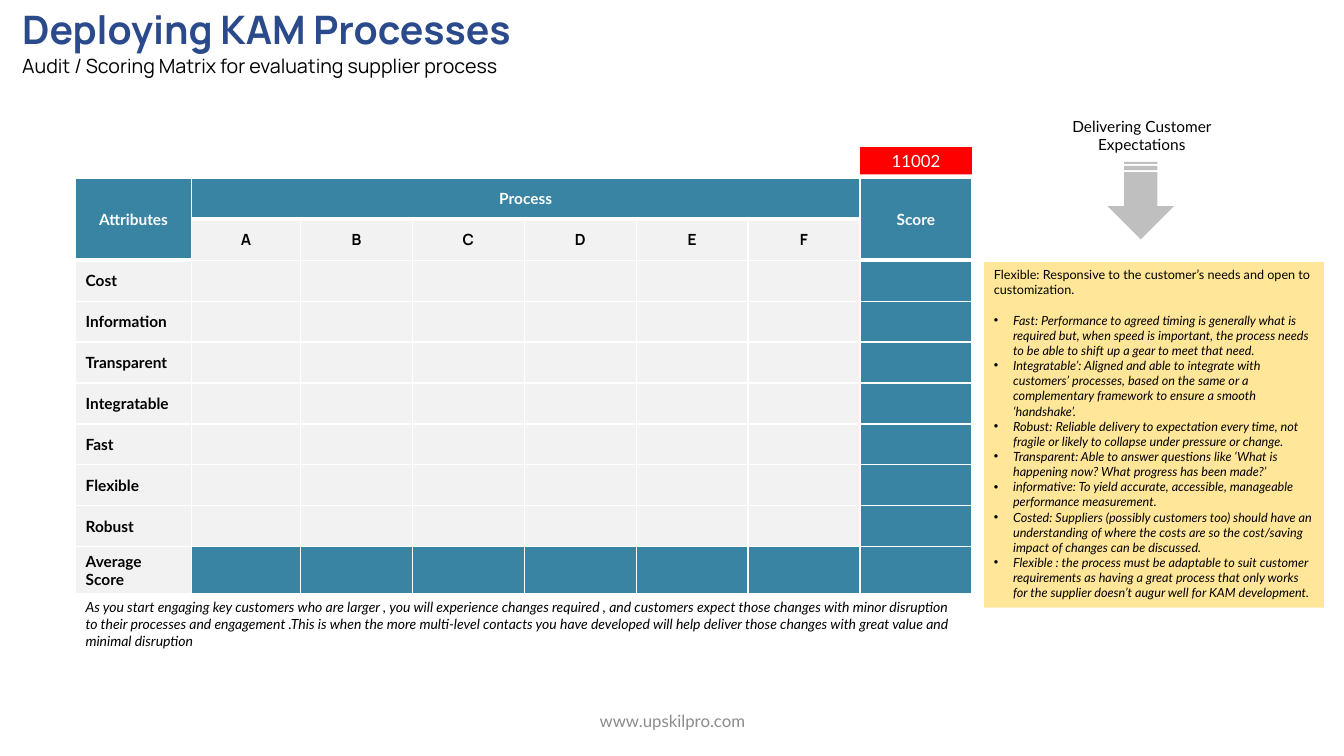
"""Build the KAM process audit and scoring matrix slide."""
from dataclasses import dataclass

from lxml import etree
from pptx import Presentation
from pptx.dml.color import RGBColor
from pptx.enum.shapes import MSO_SHAPE
from pptx.enum.text import MSO_ANCHOR, MSO_AUTO_SIZE, PP_ALIGN
from pptx.oxml.ns import qn
from pptx.util import Inches, Pt

LEFT, CENTER = PP_ALIGN.LEFT, PP_ALIGN.CENTER
TOP, MIDDLE = MSO_ANCHOR.TOP, MSO_ANCHOR.MIDDLE
RECTANGLE, ARROW = MSO_SHAPE.RECTANGLE, MSO_SHAPE.STRIPED_RIGHT_ARROW
NO_AUTOFIT = MSO_AUTO_SIZE.NONE

NAVY = RGBColor(0x2A, 0x4A, 0x8B)
TEAL = RGBColor(0x39, 0x84, 0xA3)
PALE = RGBColor(0xF2, 0xF2, 0xF2)
YELLOW = RGBColor(0xFF, 0xE6, 0x99)
SILVER = RGBColor(0xBF, 0xBF, 0xBF)
GREY = RGBColor(0x8C, 0x8C, 0x8C)
RED = RGBColor(0xFF, 0x00, 0x00)
BLACK = RGBColor(0x00, 0x00, 0x00)
WHITE = RGBColor(0xFF, 0xFF, 0xFF)


@dataclass(frozen=True)
class Style:
    size: float
    color: RGBColor = BLACK
    font: str = "Lato"
    bold: bool = False
    italic: bool = False


@dataclass(frozen=True)
class Box:
    left: float
    top: float
    width: float
    height: float

    def lengths(self):
        return [Inches(value) for value in (self.left, self.top, self.width, self.height)]


@dataclass(frozen=True)
class Label:
    text: str
    box: Box
    style: Style
    align: PP_ALIGN = CENTER
    anchor: MSO_ANCHOR = TOP


TABLE_BOX = Box(0.75, 1.77, 8.89, 4.06)
COLUMN_WIDTHS = [1.15, 1.08] + [1.11] * 6
PROCESSES = "ABCDEF"
ATTRIBUTES = ["Cost", "Information", "Transparent", "Integratable", "Fast",
              "Flexible", "Robust", "Average Score"]
HEADER_ROWS = 2
ROW_COUNT = HEADER_ROWS + len(ATTRIBUTES)
LAST_ROW, LAST_COLUMN = ROW_COUNT - 1, len(COLUMN_WIDTHS) - 1

HEADER = Style(11, WHITE, bold=True)
PROCESS = Style(11, font="Manrope", bold=True)
ATTRIBUTE = Style(11, bold=True)
NOTE = Style(9)
NOTE_ITEM = Style(9, italic=True)

EXPECTATION_INTRO = "Flexible: Responsive to the customer’s needs and open to customization."
EXPECTATIONS = [
    "Fast: Performance to agreed timing is generally what is required but, when speed is "
    "important, the process needs to be able to shift up a gear to meet that need.",
    "Integratable’: Aligned and able to integrate with customers’ processes, based on the same "
    "or a complementary framework to ensure a smooth ‘handshake’.",
    "Robust: Reliable delivery to expectation every time, not fragile or likely to collapse "
    "under pressure or change.",
    "Transparent: Able to answer questions like ‘What is happening now? What progress has been "
    "made?’",
    "informative: To yield accurate, accessible, manageable performance measurement.",
    "Costed: Suppliers (possibly customers too) should have an understanding of where the costs "
    "are so the cost/saving impact of changes can be discussed.",
    "Flexible : the process must be adaptable to suit customer requirements as having a great "
    "process that only works for the supplier doesn’t augur well for KAM development.",
]
LABELS = [
    Label("Delivering Customer Expectations", Box(10.27, 1.11, 2.11, 0.84), Style(11)),
    Label("www.upskilpro.com", Box(4.42, 6.95, 4.5, 0.4), Style(12, GREY), anchor=MIDDLE),
    Label("As you start engaging key customers who are larger , you will experience changes "
          "required , and customers expect those changes with minor disruption to their "
          "processes and engagement .This is when the more multi-level contacts you have "
          "developed will help deliver those changes with great value and minimal disruption",
          Box(0.75, 5.89, 8.89, 0.61), Style(10, italic=True), LEFT),
]


def add_run(paragraph, text: str, style: Style, align: PP_ALIGN = LEFT) -> None:
    paragraph.alignment = align
    run = paragraph.add_run()
    run.text = text
    font = run.font
    font.name, font.size = style.font, Pt(style.size)
    font.bold, font.italic = style.bold, style.italic
    font.color.rgb = style.color


def add_label(slide, label: Label) -> None:
    frame = slide.shapes.add_textbox(*label.box.lengths()).text_frame
    frame.word_wrap = True
    frame.vertical_anchor = label.anchor
    add_run(frame.paragraphs[0], label.text, label.style, label.align)


def add_filled_shape(slide, kind: MSO_SHAPE, box: Box, color: RGBColor):
    shape = slide.shapes.add_shape(kind, *box.lengths())
    shape.shadow.inherit = False
    shape.fill.solid()
    shape.fill.fore_color.rgb = color
    shape.line.fill.background()
    return shape


def add_bullet(paragraph) -> None:
    properties = paragraph._p.get_or_add_pPr()
    properties.set("marL", str(Inches(0.19)))
    properties.set("indent", str(Inches(-0.19)))
    etree.SubElement(properties, qn("a:buFont"), typeface="Arial")
    etree.SubElement(properties, qn("a:buChar"), char="•")


def set_borders(cell, bottom: float) -> None:
    properties = cell._tc.get_or_add_tcPr()
    for side, width in (("L", 1), ("R", 1), ("T", 1), ("B", bottom)):
        line = etree.SubElement(properties, qn(f"a:ln{side}"), w=str(Pt(width)))
        fill = etree.SubElement(line, qn("a:solidFill"))
        etree.SubElement(fill, qn("a:srgbClr"), val=str(WHITE))


def add_title(slide) -> None:
    title = slide.shapes.title
    title.left, title.top, title.width, title.height = Box(0.12, 0, 7.01, 0.88).lengths()
    frame = title.text_frame
    frame.word_wrap = True
    frame.auto_size = NO_AUTOFIT
    frame.vertical_anchor = TOP
    add_run(frame.paragraphs[0], "Deploying KAM Processes", Style(28, NAVY, "Manrope", bold=True))
    subtitle = frame.add_paragraph()
    subtitle.line_spacing = 1.07
    add_run(subtitle, "Audit / Scoring Matrix for evaluating supplier process",
            Style(14, font="Manrope"))


def add_matrix(slide) -> None:
    table = slide.shapes.add_table(ROW_COUNT, len(COLUMN_WIDTHS), *TABLE_BOX.lengths()).table
    table.first_row = table.horz_banding = False
    for column, width in zip(table.columns, COLUMN_WIDTHS):
        column.width = Inches(width)
    texts = {(0, 0): ("Attributes", HEADER, CENTER),
             (0, 1): ("Process", HEADER, CENTER),
             (0, LAST_COLUMN): ("Score", HEADER, CENTER)}
    for column, name in enumerate(PROCESSES, 1):
        texts[1, column] = (name, PROCESS, CENTER)
    for row, name in enumerate(ATTRIBUTES, HEADER_ROWS):
        texts[row, 0] = (name, ATTRIBUTE, LEFT)
    for row in range(ROW_COUNT):
        for column in range(len(COLUMN_WIDTHS)):
            cell = table.cell(row, column)
            is_header = row == 0 or (row == 1 and column in (0, LAST_COLUMN))
            is_score = column == LAST_COLUMN or (row == LAST_ROW and column > 0)
            set_borders(cell, 3 if is_header else 1)
            cell.fill.solid()
            cell.fill.fore_color.rgb = TEAL if is_header or is_score else PALE
            cell.vertical_anchor = MIDDLE
            if (row, column) in texts:
                add_run(cell.text_frame.paragraphs[0], *texts[row, column])
            else:
                cell.margin_top = cell.margin_bottom = Inches(0.02)
    table.cell(0, 1).merge(table.cell(0, LAST_COLUMN - 1))
    for column in (0, LAST_COLUMN):
        table.cell(0, column).merge(table.cell(1, column))


def add_expectations(slide) -> None:
    frame = add_filled_shape(slide, RECTANGLE, Box(9.76, 2.6, 3.37, 3.43), YELLOW).text_frame
    frame.word_wrap = True
    frame.vertical_anchor = TOP
    intro = frame.paragraphs[0]
    intro.space_after = Pt(10.8)
    add_run(intro, EXPECTATION_INTRO, NOTE)
    for text in EXPECTATIONS:
        paragraph = frame.add_paragraph()
        add_bullet(paragraph)
        add_run(paragraph, text, NOTE_ITEM)


def main() -> None:
    presentation = Presentation()
    presentation.slide_width, presentation.slide_height = Inches(13.33), Inches(7.5)
    slide = presentation.slides.add_slide(presentation.slide_layouts[5])
    add_title(slide)
    add_matrix(slide)
    add_expectations(slide)
    add_filled_shape(slide, ARROW, Box(10.93, 1.66, 0.77, 0.66), SILVER).rotation = 90
    for label in LABELS:
        add_label(slide, label)
    total = add_filled_shape(slide, RECTANGLE, Box(8.53, 1.46, 1.11, 0.27), RED).text_frame
    total.vertical_anchor = MIDDLE
    add_run(total.paragraphs[0], "11002", Style(12, WHITE), CENTER)
    presentation.save("out.pptx")


if __name__ == "__main__":
    main()
